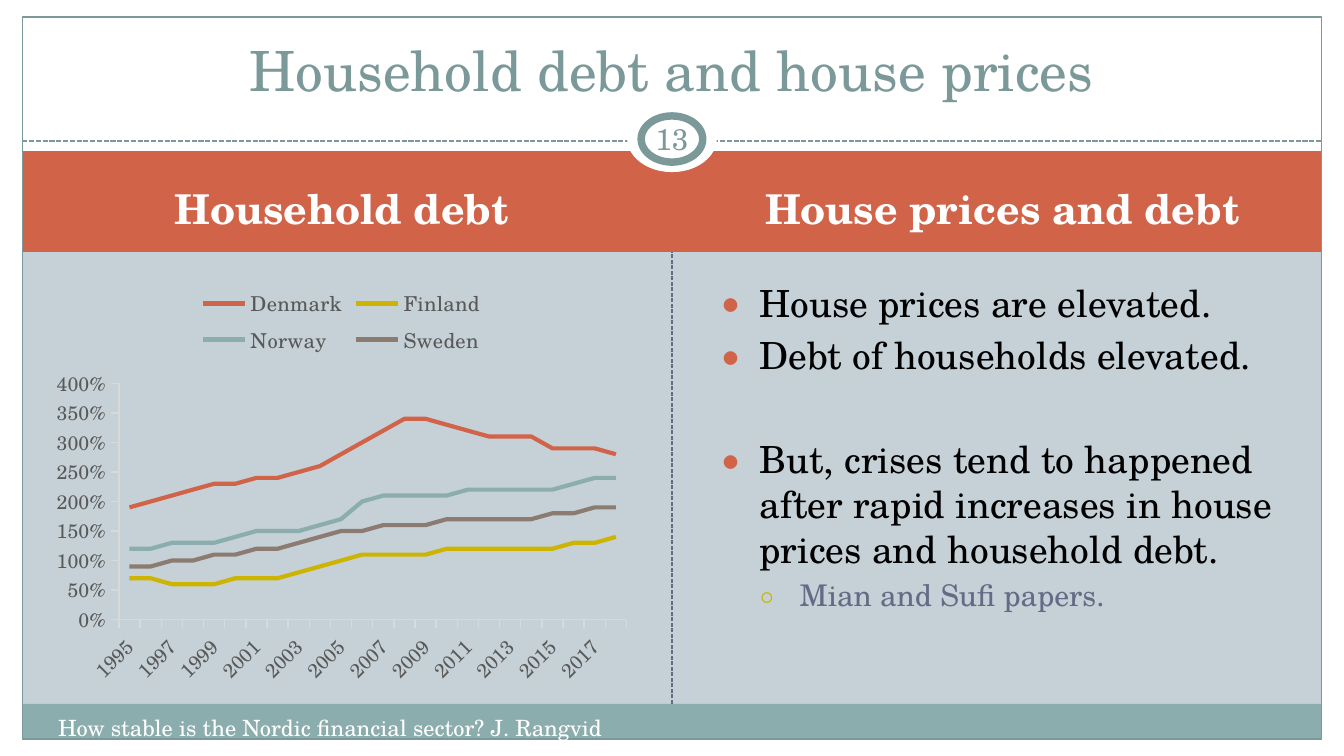
from lxml import etree
from pptx import Presentation
from pptx.chart.data import CategoryChartData
from pptx.dml.color import RGBColor
from pptx.enum.chart import XL_CHART_TYPE, XL_LEGEND_POSITION, XL_TICK_MARK
from pptx.enum.dml import MSO_LINE
from pptx.enum.shapes import MSO_CONNECTOR, MSO_SHAPE
from pptx.enum.text import MSO_ANCHOR as Anchor, MSO_AUTO_SIZE, PP_ALIGN as Align
from pptx.oxml.ns import qn
from pptx.util import Inches, Pt

FONT = "TeX Gyre Schola"
WHITE = RGBColor(0xFF, 0xFF, 0xFF)
BLACK = RGBColor(0x00, 0x00, 0x00)
PALE_BLUE = RGBColor(0xC5, 0xD1, 0xD7)
RUST = RGBColor(0xD1, 0x63, 0x49)
GOLD = RGBColor(0xCC, 0xB4, 0x00)
SAGE = RGBColor(0x8C, 0xAD, 0xAE)
TAUPE = RGBColor(0x8C, 0x7B, 0x70)
TEAL = RGBColor(0x7C, 0x99, 0x9A)
SLATE = RGBColor(0x64, 0x6B, 0x86)
LABEL_GREY = RGBColor(0x59, 0x59, 0x59)
AXIS_GREY = RGBColor(0xD9, 0xD9, 0xD9)

prs = Presentation()
prs.slide_width, prs.slide_height = Inches(10), Inches(5.625)
slide = prs.slides.add_slide(prs.slide_layouts[4])
shapes = slide.shapes
slide.background.fill.solid()
slide.background.fill.fore_color.rgb = PALE_BLUE

# Grid of 120 columns and 90 rows
COL, ROW = prs.slide_width / 120, prs.slide_height / 90


def cells(left, top, width, height):
    return [int(n) for n in (left * COL, top * ROW, width * COL, height * ROW)]


def write(paragraph, text, size, color, align=Align.LEFT, bold=False):
    paragraph.text = text
    paragraph.alignment = align
    font = paragraph.font
    font.name, font.size, font.bold = FONT, Pt(size), bold
    font.color.rgb = color


# Margins, bands, frame and number badge, from back to front
panels = []
for kind, area, fill, outline, weight in [
    (MSO_SHAPE.RECTANGLE, (0, 0, 120, 19), WHITE, None, 0),
    (MSO_SHAPE.RECTANGLE, (0, 88, 120, 2), WHITE, None, 0),
    (MSO_SHAPE.RECTANGLE, (0, 0, 2, 90), WHITE, None, 0),
    (MSO_SHAPE.RECTANGLE, (118, 0, 2, 90), WHITE, None, 0),
    (MSO_SHAPE.RECTANGLE, (2, 18, 116, 12), RUST, None, 0),
    (MSO_SHAPE.RECTANGLE, (2, 83.8, 116, 4.2), SAGE, None, 0),
    (MSO_SHAPE.RECTANGLE, (2, 2, 116, 86), None, TEAL, 0.75),
    (MSO_SHAPE.OVAL, (56, 12.5, 8, 8), WHITE, None, 0),
    (MSO_SHAPE.OVAL, (57.25, 13.8, 5.5, 5.5), WHITE, TEAL, 4),
]:
    panel = shapes.add_shape(kind, *cells(*area))
    panel.shadow.inherit = False
    if fill is None:
        panel.fill.background()
    else:
        panel.fill.solid()
        panel.fill.fore_color.rgb = fill
    if outline is None:
        panel.line.fill.background()
    else:
        panel.line.color.rgb = outline
        panel.line.width = Pt(weight)
    panels.append(panel)
heading_band, footer_band, frame, badge_gap = panels[4:8]

# Dashed rules: one under the title, one between the halves
rule_left, rule_top, rule_width, _ = cells(2, 16.8, 116, 0)
title_rule = shapes.add_connector(
    MSO_CONNECTOR.STRAIGHT, rule_left, rule_top, rule_left + rule_width, rule_top)
divider = shapes.add_connector(MSO_CONNECTOR.STRAIGHT, 0, 0, 0, 0)
divider.begin_connect(footer_band, 0)
divider.end_connect(heading_band, 2)
for rule, color, weight in [(title_rule, TEAL, 0.9), (divider, SLATE, 0.75)]:
    rule.line.color.rgb = color
    rule.line.width = Pt(weight)
    rule.line.dash_style = MSO_LINE.SQUARE_DOT
    etree.SubElement(rule.element.spPr, qn("a:effectLst"))
frame.element.addprevious(title_rule.element)

# Title, headings and list come in front of the bands
title, left_heading, chart_slot, right_heading, points = slide.placeholders
chart_slot.element.getparent().remove(chart_slot.element)
for holder, area, anchor in [
    (left_heading, (4, 20, 53, 9.6), Anchor.MIDDLE),
    (right_heading, (63, 20, 53, 9.6), Anchor.MIDDLE),
    (title, (4, 3, 112, 10), Anchor.BOTTOM),
    (points, (63, 32.5, 53, 50), Anchor.TOP),
]:
    holder.left, holder.top, holder.width, holder.height = cells(*area)
    holder.text_frame.vertical_anchor = anchor
    holder.text_frame.auto_size = MSO_AUTO_SIZE.NONE
    holder.element.getparent().append(holder.element)

write(title.text_frame.paragraphs[0], "Household debt and house prices", 29.7, TEAL, Align.CENTER)
for heading, text in [(left_heading, "Household debt"), (right_heading, "House prices and debt")]:
    write(heading.text_frame.paragraphs[0], text, 22, WHITE, Align.CENTER, True)

# Footer and slide number
footer = shapes.add_textbox(*cells(4, 84.2, 52, 5)).text_frame
footer.word_wrap = True
write(footer.paragraphs[0], "How stable is the Nordic financial sector? J. Rangvid", 12, WHITE)

number = shapes.add_textbox(*cells(57, 13.6, 6, 5.8)).text_frame
number.word_wrap = True
number.vertical_anchor = Anchor.MIDDLE
number.margin_left = number.margin_right = Inches(0.05)
write(number.paragraphs[0], "13", 16, TEAL, Align.CENTER)

# Bulleted list
CONCLUSION = ("But, crises tend to happened after rapid increases in house prices "
              "and household debt.")
for i, (text, level, size, color, gap, bullet, bullet_color, bullet_size) in enumerate([
    ("House prices are elevated.", 0, 20, BLACK, 4, "●", RUST, 85),
    ("Debt of households elevated.", 0, 20, BLACK, 4, "●", RUST, 85),
    (CONCLUSION, 0, 20, BLACK, 32, "●", RUST, 85),
    ("Mian and Sufi papers.", 1, 16, SLATE, 3.2, "○", GOLD, 70),
]):
    frame_text = points.text_frame
    point = frame_text.add_paragraph() if i else frame_text.paragraphs[0]
    point.level = level
    point.space_before = Pt(gap)
    props = point._p.get_or_add_pPr()
    props.set("marL", str(Inches(0.3 * (level + 1))))
    props.set("indent", str(Inches(-0.3)))
    tint = etree.SubElement(props, qn("a:buClr"))
    etree.SubElement(tint, qn("a:srgbClr"), val=str(bullet_color))
    etree.SubElement(props, qn("a:buSzPct"), val=str(bullet_size * 1000))
    etree.SubElement(props, qn("a:buFont"), typeface=FONT)
    etree.SubElement(props, qn("a:buChar"), char=bullet)
    write(point, text, size, color)

# Household debt chart
debt = CategoryChartData(number_format="0%")
debt.categories = [str(year) for year in range(1995, 2019)]
countries = [
    ("Denmark", RUST, [1.9, 2, 2.1, 2.2, 2.3, 2.3, 2.4, 2.4, 2.5, 2.6, 2.8, 3,
                       3.2, 3.4, 3.4, 3.3, 3.2, 3.1, 3.1, 3.1, 2.9, 2.9, 2.9, 2.8]),
    ("Finland", GOLD, [0.7, 0.7, 0.6, 0.6, 0.6, 0.7, 0.7, 0.7, 0.8, 0.9, 1, 1.1,
                       1.1, 1.1, 1.1, 1.2, 1.2, 1.2, 1.2, 1.2, 1.2, 1.3, 1.3, 1.4]),
    ("Norway", SAGE, [1.2, 1.2, 1.3, 1.3, 1.3, 1.4, 1.5, 1.5, 1.5, 1.6, 1.7, 2,
                      2.1, 2.1, 2.1, 2.1, 2.2, 2.2, 2.2, 2.2, 2.2, 2.3, 2.4, 2.4]),
    ("Sweden", TAUPE, [0.9, 0.9, 1, 1, 1.1, 1.1, 1.2, 1.2, 1.3, 1.4, 1.5, 1.5,
                       1.6, 1.6, 1.6, 1.7, 1.7, 1.7, 1.7, 1.7, 1.8, 1.8, 1.9, 1.9]),
]
for country, _, ratios in countries:
    debt.add_series(country, ratios)
chart = shapes.add_chart(XL_CHART_TYPE.LINE, *cells(4, 32.5, 53, 50), debt).chart
chart.font.name, chart.font.size = FONT, Pt(10)
chart.font.color.rgb = BLACK
chart.has_title = False
chart.has_legend = True
chart.legend.position = XL_LEGEND_POSITION.TOP
chart.legend.include_in_layout = False
chart.plots[0].vary_by_categories = False
for series, (_, color, _) in zip(chart.plots[0].series, countries):
    series.smooth = False
    series.format.line.color.rgb = color
    series.format.line.width = Pt(2.25)

years, ratio_axis = chart.category_axis, chart.value_axis
for axis in (years, ratio_axis):
    axis.has_major_gridlines = False
    axis.major_tick_mark = XL_TICK_MARK.OUTSIDE
    axis.format.line.color.rgb = AXIS_GREY
    axis.format.line.width = Pt(0.75)
for labels, size in [(years.tick_labels, 10.5), (ratio_axis.tick_labels, 10.5), (chart.legend, 11)]:
    labels.font.name, labels.font.size = FONT, Pt(size)
    labels.font.color.rgb = LABEL_GREY
ratio_axis.minimum_scale, ratio_axis.maximum_scale, ratio_axis.major_unit = 0, 4, 0.5
ratio_axis.tick_labels.number_format = "0%"
ratio_axis.tick_labels.number_format_is_linked = False
years._element.find(qn("c:txPr")).find(qn("a:bodyPr")).set("rot", "-2700000")

prs.save("out.pptx")
